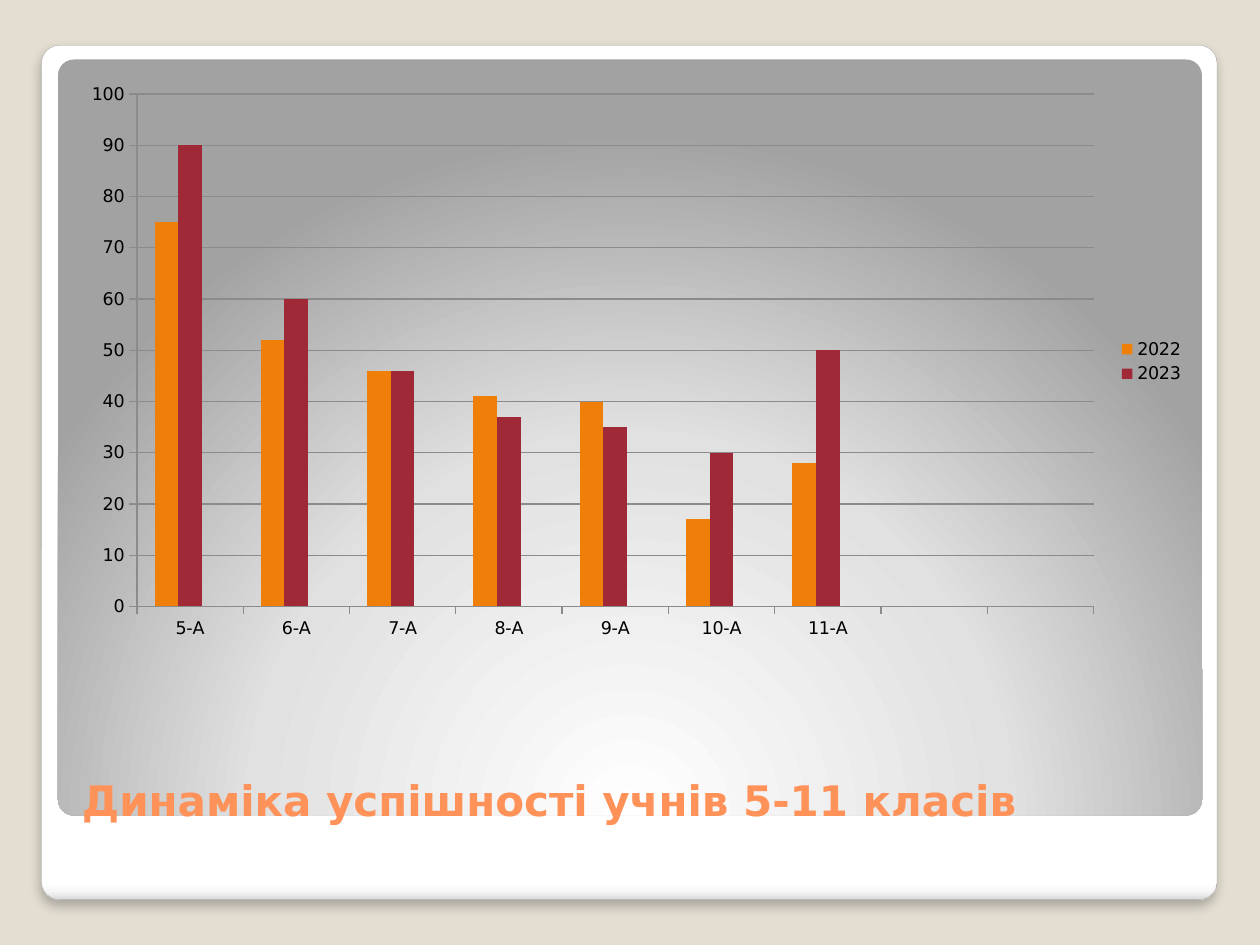
from dataclasses import dataclass

from lxml import etree
from pptx import Presentation
from pptx.chart.data import CategoryChartData
from pptx.dml.color import RGBColor
from pptx.enum.chart import XL_CHART_TYPE, XL_LEGEND_POSITION, XL_TICK_MARK
from pptx.enum.shapes import MSO_SHAPE
from pptx.enum.text import MSO_ANCHOR, PP_ALIGN
from pptx.oxml import parse_xml
from pptx.oxml.ns import nsdecls, qn
from pptx.util import Inches, Pt

WIDTH, HEIGHT = Inches(10), Inches(7.5)
FONT = "DejaVu Sans"
AXIS_COLOR = "8B8B8B"
LINEAR = '<a:lin ang="5400000" scaled="0"/>'
RADIAL = ('<a:path path="circle">'
          '<a:fillToRect l="50000" t="175000" r="50000" b="-75000"/></a:path>')


@dataclass(frozen=True)
class Box:
    """A place on the slide, in shares of its width and height."""
    left: float
    top: float
    width: float
    height: float

    def emu(self) -> tuple:
        return (int(self.left * WIDTH), int(self.top * HEIGHT),
                int(self.width * WIDTH), int(self.height * HEIGHT))


@dataclass(frozen=True)
class Panel:
    box: Box
    stops: tuple
    direction: str
    outlined: bool = False


@dataclass(frozen=True)
class Year:
    name: str
    values: tuple
    color: str


PANELS = (
    Panel(Box(0.033, 0.048, 0.933, 0.904),
          ((0, "FFFFFF"), (98, "FFFFFF"), (99, "F7F7F7"), (100, "DADADA")),
          LINEAR, outlined=True),
    Panel(Box(0.046, 0.063, 0.908, 0.8),
          ((0, "FFFFFF"), (55, "E1E1E1"), (100, "A2A2A2")), RADIAL),
)
TITLE_BOX = Box(0.055, 0.727, 0.895, 0.153)
CHART_BOX = Box(0.055, 0.077, 0.895, 0.611)
CLASSES = [f"{number}-А" for number in range(5, 12)] + ["", ""]
EMPTY = (None, None)
YEARS = (
    Year("2022", (75, 52, 46, 41, 40, 17, 28) + EMPTY, "F07F09"),
    Year("2023", (90, 60, 46, 37, 35, 30, 50) + EMPTY, "9F2936"),
    Year("Series 3", (None,) * len(CLASSES), "1B587C"),
)


def rgb(color: str) -> RGBColor:
    return RGBColor.from_string(color)


def set_gradient(shape, stops: tuple, direction: str) -> None:
    shape.fill.background()
    marks = "".join(f'<a:gs pos="{share * 1000}"><a:srgbClr val="{color}"/></a:gs>'
                    for share, color in stops)
    gradient = parse_xml(f'<a:gradFill {nsdecls("a")} rotWithShape="1">'
                         f"<a:gsLst>{marks}</a:gsLst>{direction}</a:gradFill>")
    properties = shape.element.spPr
    properties.replace(properties.find(qn("a:noFill")), gradient)


def add_soft_shadow(shape) -> None:
    effects = shape.element.spPr.find(qn("a:effectLst"))
    effects.append(parse_xml(
        f'<a:outerShdw {nsdecls("a")} blurRad="{Pt(6)}" dist="{Pt(4)}" '
        'dir="5400000" algn="tl" rotWithShape="0"><a:srgbClr val="000000">'
        '<a:alpha val="25000"/></a:srgbClr></a:outerShdw>'))


def draw_panel(slide, panel: Panel):
    shape = slide.shapes.add_shape(MSO_SHAPE.ROUNDED_RECTANGLE, *panel.box.emu())
    shape.adjustments[0] = 0.021
    shape.shadow.inherit = False
    set_gradient(shape, panel.stops, panel.direction)
    if panel.outlined:
        shape.line.color.rgb = rgb("A4A4A4")
        shape.line.width = Pt(0.16)
        add_soft_shadow(shape)
    else:
        shape.line.fill.background()
    return shape


def format_title(title, text: str) -> None:
    title.left, title.top, title.width, title.height = TITLE_BOX.emu()
    frame = title.text_frame
    frame.text = text
    frame.word_wrap = True
    frame.vertical_anchor = MSO_ANCHOR.BOTTOM
    paragraph = frame.paragraphs[0]
    paragraph.alignment = PP_ALIGN.LEFT
    font = paragraph.runs[0].font
    font.name, font.size, font.bold = FONT, Pt(24), True
    font.color.rgb = rgb("FF9258")


def hide_legend_entry(legend, index: int) -> None:
    entry = etree.Element(qn("c:legendEntry"))
    etree.SubElement(entry, qn("c:idx")).set("val", str(index))
    etree.SubElement(entry, qn("c:delete")).set("val", "1")
    legend._element.find(qn("c:legendPos")).addnext(entry)


def draw_chart(slide) -> None:
    data = CategoryChartData()
    data.categories = CLASSES
    for year in YEARS:
        data.add_series(year.name, year.values)
    chart = slide.shapes.add_chart(
        XL_CHART_TYPE.COLUMN_CLUSTERED, *CHART_BOX.emu(), data).chart
    chart.has_title = False
    chart.font.name, chart.font.size = FONT, Pt(10)
    chart.font.color.rgb = rgb("000000")

    plot = chart.plots[0]
    plot.gap_width, plot.overlap = 150, 0
    plot.vary_by_categories = False
    for series, year in zip(plot.series, YEARS):
        series.format.fill.solid()
        series.format.fill.fore_color.rgb = rgb(year.color)

    value_axis = chart.value_axis
    value_axis.minimum_scale, value_axis.maximum_scale = 0, 100
    value_axis.major_unit = 10
    value_axis.has_major_gridlines = True
    for axis in (chart.category_axis, value_axis):
        axis.major_tick_mark = XL_TICK_MARK.OUTSIDE
        axis.format.line.color.rgb = rgb(AXIS_COLOR)
    value_axis.major_gridlines.format.line.color.rgb = rgb(AXIS_COLOR)

    chart.has_legend = True
    chart.legend.position = XL_LEGEND_POSITION.RIGHT
    chart.legend.include_in_layout = False
    hide_legend_entry(chart.legend, len(YEARS) - 1)


def main() -> None:
    presentation = Presentation()
    presentation.slide_width, presentation.slide_height = WIDTH, HEIGHT
    slide = presentation.slides.add_slide(presentation.slide_layouts[5])
    slide.background.fill.solid()
    slide.background.fill.fore_color.rgb = rgb("E3DED1")

    panels = [draw_panel(slide, panel) for panel in PANELS]
    title = slide.shapes.title
    format_title(title, "Динаміка успішності учнів 5-11 класів")
    panels[-1].element.addnext(title.element)
    draw_chart(slide)
    presentation.save("out.pptx")


if __name__ == "__main__":
    main()
